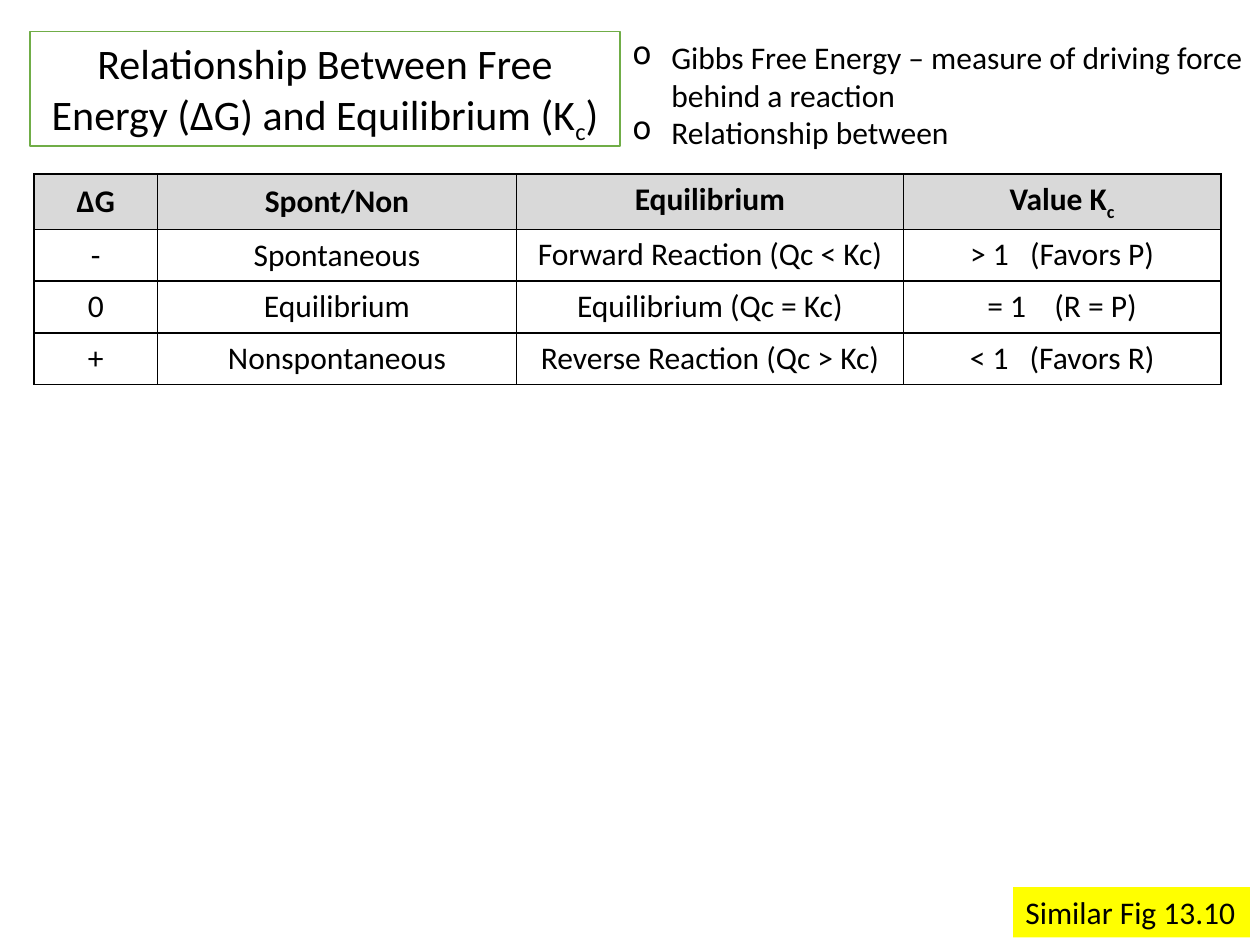
from typing import NamedTuple

from lxml.etree import SubElement
from pptx import Presentation
from pptx.dml.color import RGBColor
from pptx.enum.shapes import MSO_SHAPE
from pptx.enum.text import MSO_ANCHOR, MSO_AUTO_SIZE, PP_ALIGN
from pptx.oxml.ns import qn
from pptx.util import Inches, Pt

COLORS = {
    "text": "000000",
    "paper": "FFFFFF",
    "frame": "70AD47",
    "header": "D9D9D9",
    "label": "FFFF00",
}
FONT = "Calibri"


class Span(NamedTuple):
    text: str
    subscript: bool = False
    spacing: int = 0


class Row(NamedTuple):
    cells: list[list[Span]]
    fill: str = "paper"
    bold: bool = False


def rgb(name: str) -> RGBColor:
    return RGBColor.from_string(COLORS[name])


def add_spans(p, spans: list[Span], size: int = 18, bold: bool = False) -> None:
    for span in spans:
        r = p.add_run()
        r.text = span.text
        r.font.name = FONT
        r.font.size = Pt(size)
        r.font.bold = bold
        r.font.color.rgb = rgb("text")
        rPr = r.font._element
        if span.subscript:
            rPr.set("baseline", "-25000")
        if span.spacing:
            rPr.set("spc", str(span.spacing * 100))


def add_bullet(p, text: str) -> None:
    pPr = p._p.get_or_add_pPr()
    pPr.set("marL", str(Inches(0.31)))
    pPr.set("indent", str(-Inches(0.31)))
    SubElement(pPr, qn("a:buChar"), char="o")
    add_spans(p, [Span(text)])


def set_borders(cell) -> None:
    tcPr = cell._tc.get_or_add_tcPr()
    for i, side in enumerate(("lnL", "lnR", "lnT", "lnB")):
        ln = tcPr.makeelement(qn(f"a:{side}"), {"w": str(Pt(1))})
        fill = SubElement(ln, qn("a:solidFill"))
        SubElement(fill, qn("a:srgbClr"), val=COLORS["text"])
        tcPr.insert(i, ln)


def plain(*texts: str) -> list[list[Span]]:
    return [[Span(text)] for text in texts]


def spaced(left: str, gap: int, right: str) -> list[Span]:
    return [Span(left), Span(" ", spacing=gap), Span(right)]


def add_title(s) -> None:
    sp = s.shapes.title
    sp.left, sp.top = Inches(0.24), Inches(0.25)
    sp.width, sp.height = Inches(4.68), Inches(0.91)
    sp.fill.solid()
    sp.fill.fore_color.rgb = rgb("paper")
    sp.line.color.rgb = rgb("frame")
    sp.line.width = Pt(1)
    tf = sp.text_frame
    tf.auto_size = MSO_AUTO_SIZE.NONE
    tf.word_wrap = True
    tf.vertical_anchor = MSO_ANCHOR.TOP
    p = tf.paragraphs[0]
    p.alignment = PP_ALIGN.CENTER
    add_spans(p, [
        Span("Relationship Between Free Energy (ΔG) and Equilibrium (K"),
        Span("c", subscript=True),
        Span(")"),
    ], size=24)


def add_notes_list(s, items: list[str]) -> None:
    sp = s.shapes.add_textbox(Inches(4.92), Inches(0.25), Inches(5.32), Inches(1.01))
    tf = sp.text_frame
    tf.word_wrap = True
    for i, item in enumerate(items):
        add_bullet(tf.add_paragraph() if i else tf.paragraphs[0], item)


def add_energy_table(s, rows: list[Row], widths: list[float]) -> None:
    height = 0.41
    frame = s.shapes.add_table(
        len(rows), len(widths), Inches(0.27), Inches(1.38),
        Inches(sum(widths)), Inches(height * len(rows)))
    table = frame.table
    for column, width in zip(table.columns, widths):
        column.width = Inches(width)
    for i, row in enumerate(rows):
        table.rows[i].height = Inches(height)
        for j, spans in enumerate(row.cells):
            cell = table.cell(i, j)
            cell.fill.solid()
            cell.fill.fore_color.rgb = rgb(row.fill)
            cell.vertical_anchor = MSO_ANCHOR.MIDDLE if j < 2 else MSO_ANCHOR.TOP
            set_borders(cell)
            p = cell.text_frame.paragraphs[0]
            p.alignment = PP_ALIGN.CENTER
            add_spans(p, spans, bold=row.bold)


def add_label(s, text: str) -> None:
    sp = s.shapes.add_shape(
        MSO_SHAPE.RECTANGLE, Inches(8.04), Inches(7.04), Inches(1.88), Inches(0.4))
    sp.shadow.inherit = False
    sp.fill.solid()
    sp.fill.fore_color.rgb = rgb("label")
    sp.line.fill.background()
    tf = sp.text_frame
    tf.word_wrap = False
    tf.auto_size = MSO_AUTO_SIZE.SHAPE_TO_FIT_TEXT
    tf.vertical_anchor = MSO_ANCHOR.TOP
    p = tf.paragraphs[0]
    p.alignment = PP_ALIGN.LEFT
    add_spans(p, [Span(text)])


def main() -> None:
    prs = Presentation()
    prs.slide_width, prs.slide_height = Inches(10), Inches(7.5)
    s = prs.slides.add_slide(prs.slide_layouts[5])
    add_title(s)
    add_notes_list(s, [
        "Gibbs Free Energy – measure of driving force behind a reaction",
        "Relationship between",
    ])
    add_energy_table(s, [
        Row(plain("ΔG", "Spont/Non", "Equilibrium")
            + [[Span("Value K"), Span("c", subscript=True)]], "header", True),
        Row(plain("-", "Spontaneous", "Forward Reaction (Qc < Kc)")
            + [spaced("> 1", 8, "(Favors P)")]),
        Row(plain("0", "Equilibrium", "Equilibrium (Qc = Kc)")
            + [spaced("= 1", 12, "(R = P)")]),
        Row(plain("+", "Nonspontaneous", "Reverse Reaction (Qc > Kc)")
            + [spaced("< 1", 8, "(Favors R)")]),
    ], [0.98, 2.85, 3.07, 2.52])
    add_label(s, "Similar Fig 13.10")
    prs.save("out.pptx")


if __name__ == "__main__":
    main()
